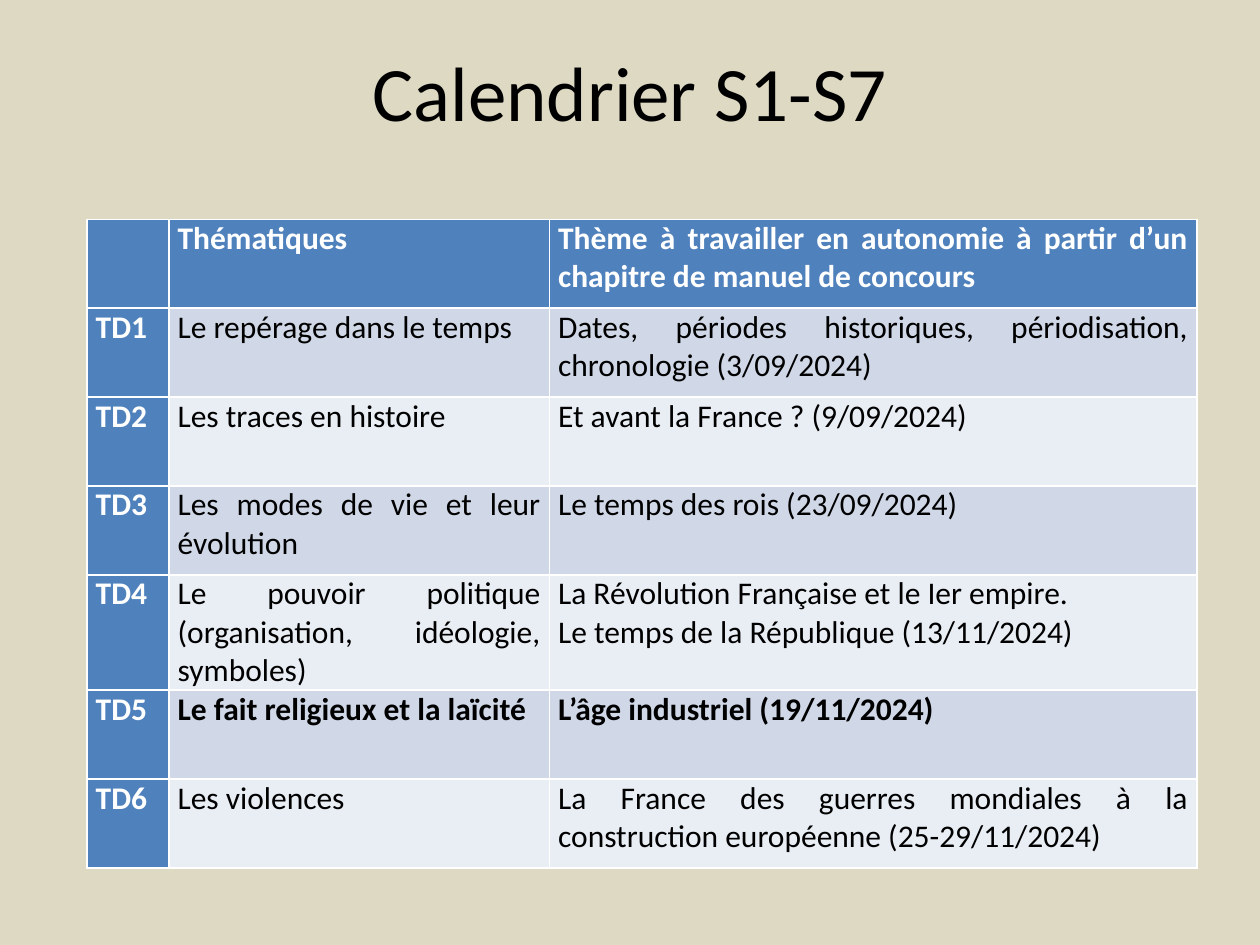
from dataclasses import dataclass

from pptx import Presentation
from pptx.dml.color import RGBColor
from pptx.enum.text import MSO_ANCHOR, PP_ALIGN
from pptx.util import Inches, Pt

CENTER = PP_ALIGN.CENTER
JUSTIFY = PP_ALIGN.JUSTIFY
MIDDLE = MSO_ANCHOR.MIDDLE
TOP = MSO_ANCHOR.TOP
TITLE_ONLY = 5


@dataclass(frozen=True)
class Theme:
    font: str = "Calibri"
    title_size: int = 44
    table_size: int = 18
    background: str = "DDD9C3"
    header: str = "4F81BD"
    header_text: str = "FFFFFF"
    text: str = "000000"
    bands: tuple = ("D0D8E8", "E9EDF4")


THEME = Theme()

TITLE = "Calendrier S1-S7"
HEADINGS = (
    "",
    "Thématiques",
    "Thème à travailler en autonomie à partir d’un chapitre de manuel de concours",
)
SESSIONS = (
    ("Le repérage dans le temps",
     "Dates, périodes historiques, périodisation, chronologie (3/09/2024)"),
    ("Les traces en histoire", "Et avant la France ? (9/09/2024)"),
    ("Les modes de vie et leur évolution", "Le temps des rois (23/09/2024)"),
    ("Le pouvoir politique (organisation, idéologie, symboles)",
     "La Révolution Française et le Ier empire.\n"
     "Le temps de la République (13/11/2024)"),
    ("Le fait religieux et la laïcité", "L’âge industriel (19/11/2024)"),
    ("Les violences",
     "La France des guerres mondiales à la construction européenne (25-29/11/2024)"),
)
HIGHLIGHTED_SESSION = 5
COLUMN_WIDTHS = (0.65, 3.02, 5.14)


def format_text(text_frame, size, color, alignment, bold=False):
    for paragraph in text_frame.paragraphs:
        paragraph.alignment = alignment
        for run in paragraph.runs:
            run.font.name = THEME.font
            run.font.size = Pt(size)
            run.font.bold = bold
            run.font.color.rgb = RGBColor.from_string(color)


def add_title(slide, left, top, width, height):
    title = slide.shapes.title
    title.left, title.top = Inches(left), Inches(top)
    title.width, title.height = Inches(width), Inches(height)
    title.text_frame.text = TITLE
    title.text_frame.vertical_anchor = MIDDLE
    format_text(title.text_frame, THEME.title_size, THEME.text, CENTER)


def fill_cell(cell, text, fill, color, bold):
    cell.fill.solid()
    cell.fill.fore_color.rgb = RGBColor.from_string(fill)
    cell.margin_left = cell.margin_right = Inches(0.07)
    cell.margin_top = cell.margin_bottom = 0
    cell.vertical_anchor = TOP
    cell.text_frame.text = text
    format_text(cell.text_frame, THEME.table_size, color, JUSTIFY, bold)


def add_calendar(slide, left, top, width, height):
    rows = [HEADINGS]
    for number, session in enumerate(SESSIONS, start=1):
        rows.append((f"TD{number}", *session))

    frame = slide.shapes.add_table(
        len(rows), len(HEADINGS),
        Inches(left), Inches(top), Inches(width), Inches(height),
    )
    table = frame.table
    table.first_col = True
    for column, column_width in zip(table.columns, COLUMN_WIDTHS):
        column.width = Inches(column_width)
    for row in table.rows:
        row.height = Inches(height / len(rows))

    for row_index, texts in enumerate(rows):
        for column_index, text in enumerate(texts):
            cell = table.cell(row_index, column_index)
            if row_index == 0 or column_index == 0:
                fill_cell(cell, text, THEME.header, THEME.header_text, True)
            else:
                band = THEME.bands[(row_index - 1) % len(THEME.bands)]
                bold = row_index == HIGHLIGHTED_SESSION
                fill_cell(cell, text, band, THEME.text, bold)


def main():
    presentation = Presentation()
    presentation.slide_width = Inches(10)
    presentation.slide_height = Inches(7.5)
    slide = presentation.slides.add_slide(presentation.slide_layouts[TITLE_ONLY])
    background = slide.background.fill
    background.solid()
    background.fore_color.rgb = RGBColor.from_string(THEME.background)

    add_title(slide, 0.5, 0.16, 9, 1.12)
    add_calendar(slide, 0.69, 1.74, sum(COLUMN_WIDTHS), 4.94)
    presentation.save("out.pptx")


if __name__ == "__main__":
    main()
